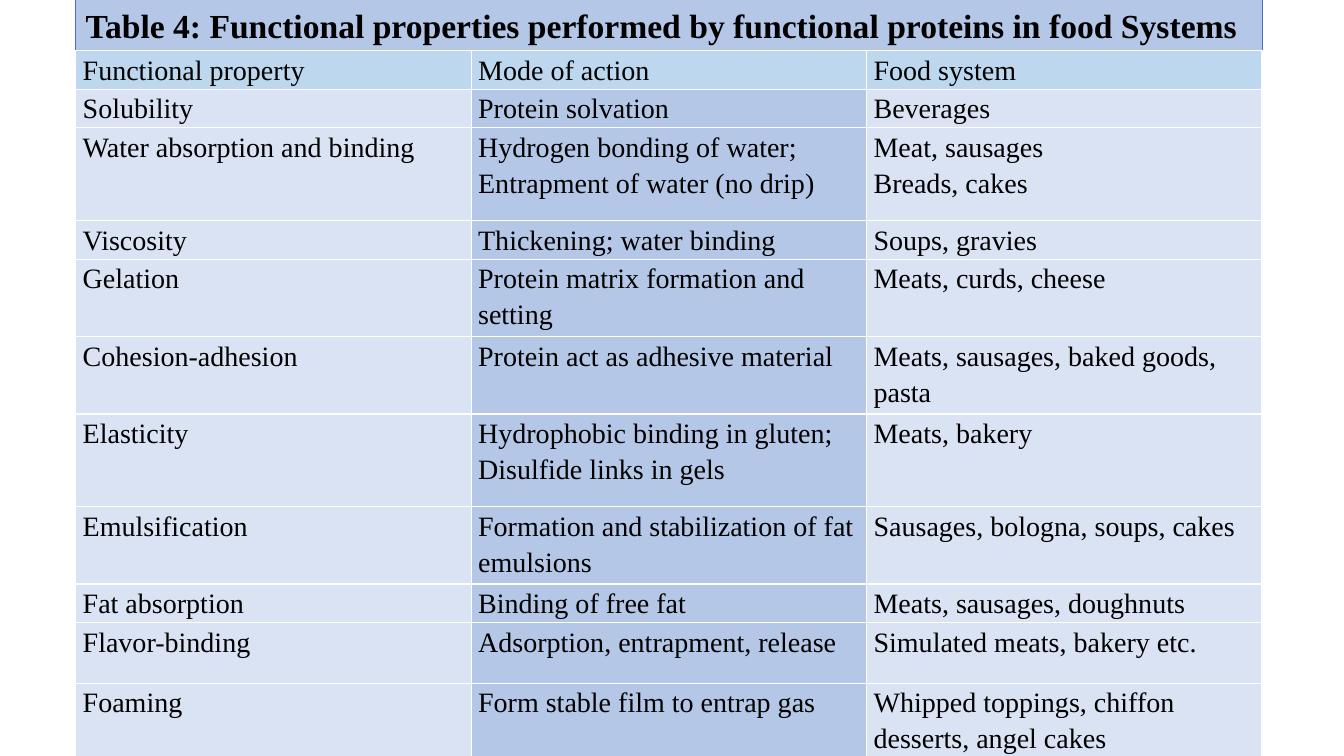
from lxml import etree
from pptx import Presentation
from pptx.dml.color import RGBColor
from pptx.enum.text import MSO_ANCHOR, MSO_AUTO_SIZE, PP_ALIGN
from pptx.oxml.ns import qn
from pptx.util import Inches, Pt

LEFT = PP_ALIGN.LEFT
MIDDLE = MSO_ANCHOR.MIDDLE
GROW = MSO_AUTO_SIZE.SHAPE_TO_FIT_TEXT

BLACK = RGBColor(0x00, 0x00, 0x00)
WHITE = RGBColor(0xFF, 0xFF, 0xFF)
BLUE = RGBColor(0x44, 0x72, 0xC4)
PERIWINKLE = RGBColor(0xB4, 0xC7, 0xE7)
SKY = RGBColor(0xBD, 0xD7, 0xEE)
PALE = RGBColor(0xDA, 0xE3, 0xF3)

TITLE = "Table 4: Functional properties performed by functional proteins in food Systems"
HEADER_FILLS = [SKY, SKY, SKY]
BODY_FILLS = [PALE, PERIWINKLE, PALE]
SINGLE, DOUBLE, SPACED = 3.87, 8, 12.27
ROWS = [
    (SINGLE, "Functional property", "Mode of action", "Food system"),
    (SINGLE, "Solubility", "Protein solvation", "Beverages"),
    (SPACED, "Water absorption and binding",
     "Hydrogen bonding of water;\nEntrapment of water (no drip)",
     "Meat, sausages\nBreads, cakes"),
    (SINGLE, "Viscosity", "Thickening; water binding", "Soups, gravies"),
    (DOUBLE, "Gelation", "Protein matrix formation and setting", "Meats, curds, cheese"),
    (DOUBLE, "Cohesion-adhesion", "Protein act as adhesive material",
     "Meats, sausages, baked goods, pasta"),
    (SPACED, "Elasticity", "Hydrophobic binding in gluten;\nDisulfide links in gels",
     "Meats, bakery"),
    (DOUBLE, "Emulsification", "Formation and stabilization of fat emulsions",
     "Sausages, bologna, soups, cakes"),
    (SINGLE, "Fat absorption", "Binding of free fat", "Meats, sausages, doughnuts"),
    (DOUBLE, "Flavor-binding", "Adsorption, entrapment, release",
     "Simulated meats, bakery etc."),
    (DOUBLE, "Foaming", "Form stable film to entrap gas",
     "Whipped toppings, chiffon desserts, angel cakes"),
]


class Deck:
    font = "Times New Roman"

    def __init__(self):
        self.prs = Presentation()
        self.prs.slide_width = Inches(13.33)
        self.prs.slide_height = Inches(7.5)
        self.s = self.prs.slides.add_slide(self.prs.slide_layouts[5])

    def x(self, percent):
        return round(self.prs.slide_width * percent / 100)

    def y(self, percent):
        return round(self.prs.slide_height * percent / 100)

    def box(self, left, top, width, height):
        return self.x(left), self.y(top), self.x(width), self.y(height)

    def text(self, tf, text, size, bold=False, spacing=1.0):
        tf.text = text
        for p in tf.paragraphs:
            p.alignment = LEFT
            p.line_spacing = spacing
            for r in p.runs:
                r.font.name = self.font
                r.font.size = Pt(size)
                r.font.bold = bold
                r.font.color.rgb = BLACK

    def title(self, text, *place):
        sp = self.s.shapes.title
        sp.left, sp.top, sp.width, sp.height = self.box(*place)
        sp.fill.solid()
        sp.fill.fore_color.rgb = PERIWINKLE
        sp.line.color.rgb = BLUE
        sp.line.width = Pt(0.5)
        tf = sp.text_frame
        tf.word_wrap = True
        tf.auto_size = GROW
        tf.vertical_anchor = MIDDLE
        self.text(tf, text, 24, bold=True)

    def borders(self, cell):
        tcPr = cell._tc.get_or_add_tcPr()
        for i, side in enumerate(("lnL", "lnR", "lnT", "lnB")):
            ln = etree.Element(qn(f"a:{side}"), w=str(Pt(1)))
            fill = etree.SubElement(ln, qn("a:solidFill"))
            etree.SubElement(fill, qn("a:srgbClr"), val=str(WHITE))
            tcPr.insert(i, ln)

    def cell(self, cell, text, fill):
        cell.margin_left = cell.margin_right = Inches(0.07)
        cell.margin_top = cell.margin_bottom = 0
        cell.fill.solid()
        cell.fill.fore_color.rgb = fill
        self.borders(cell)
        self.text(cell.text_frame, text, 20, spacing=1.15)

    def table(self, rows, *place):
        left, top, width, height = self.box(*place)
        columns = len(BODY_FILLS)
        frame = self.s.shapes.add_table(len(rows), columns, left, top, width, height)
        table = frame.table
        table.first_row = table.horz_banding = False
        for i, (share, *texts) in enumerate(rows):
            table.rows[i].height = self.y(share)
            fills = BODY_FILLS if i else HEADER_FILLS
            for j, (text, fill) in enumerate(zip(texts, fills)):
                self.cell(table.cell(i, j), text, fill)
        frame.height = height


def main():
    deck = Deck()
    deck.title(TITLE, 5.63, 0, 88.27, 6.67)
    deck.table(ROWS, 5.63, 6.67, 88.27, 93.87)
    deck.prs.save("out.pptx")


if __name__ == "__main__":
    main()
